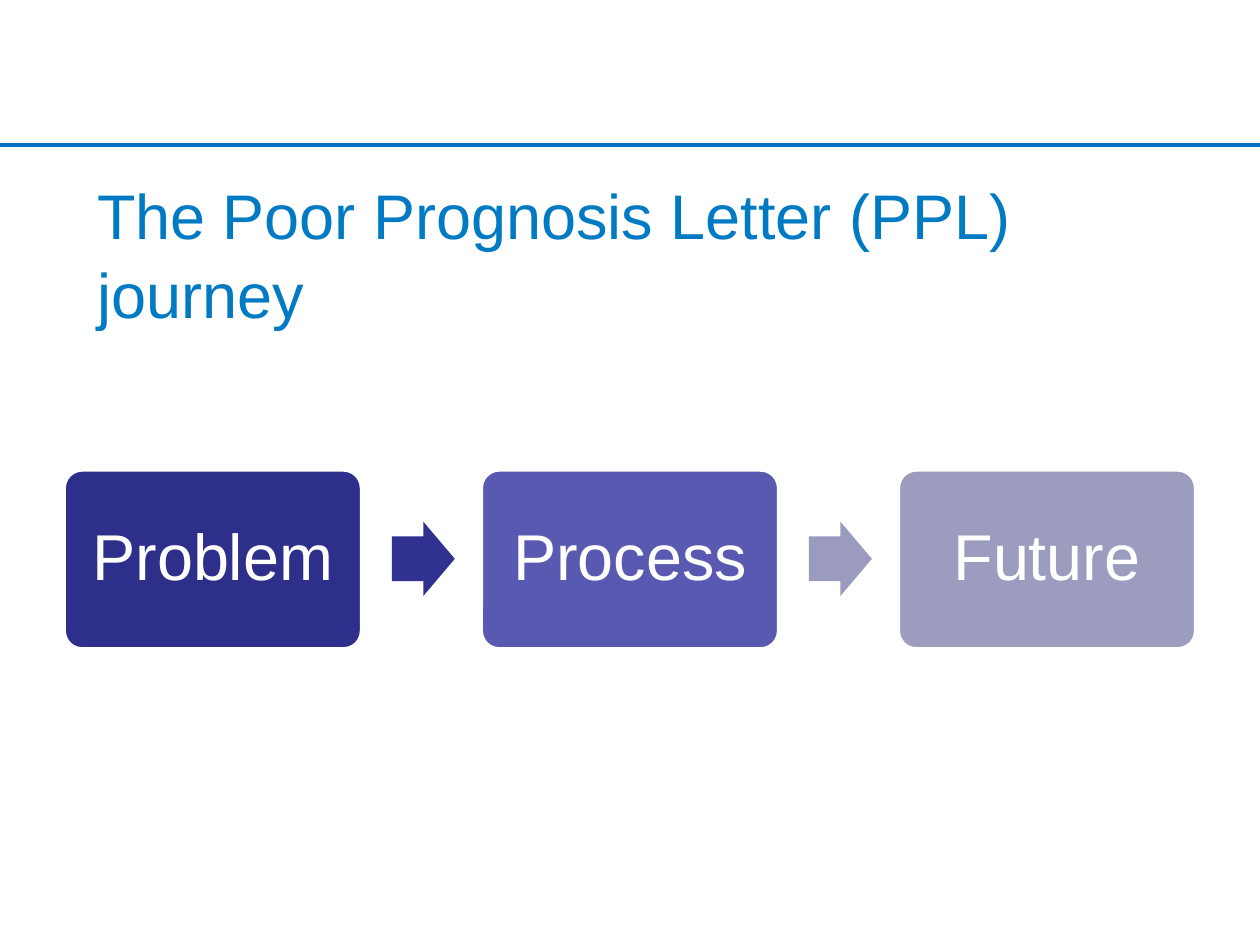
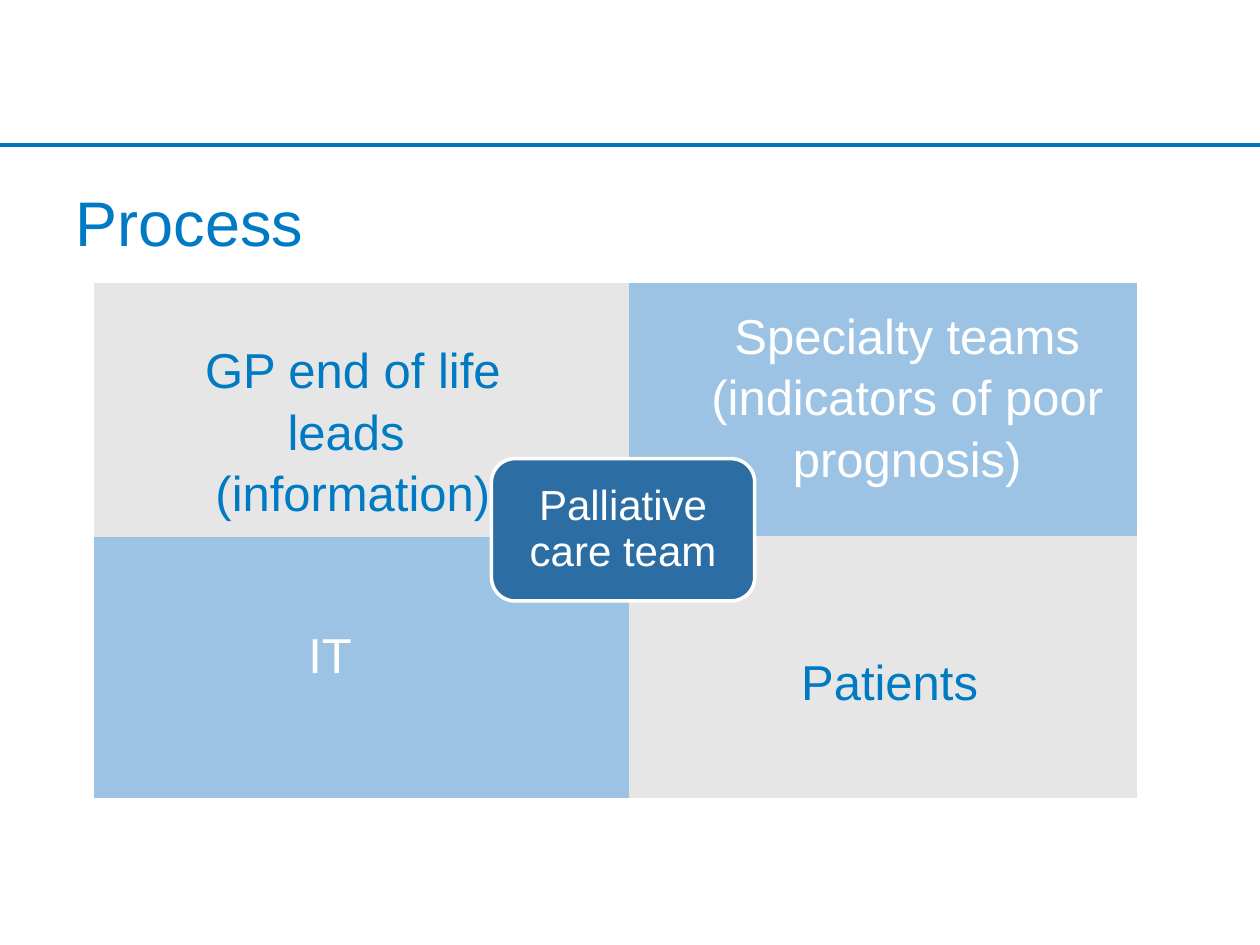
from typing import NamedTuple

from lxml.etree import SubElement
from pptx import Presentation
from pptx.dml.color import RGBColor
from pptx.enum.shapes import MSO_CONNECTOR, MSO_SHAPE
from pptx.enum.text import MSO_ANCHOR, MSO_AUTO_SIZE, PP_ALIGN
from pptx.oxml.ns import qn
from pptx.util import Inches, Pt

COLORS = {
    "white": "FFFFFF", "rule": "0070C0", "blue": "007AC3",
    "navy": "2E2E8B", "indigo": "5959B1", "lilac": "9C9CBF",
    "navy_arrow": "313192", "lilac_arrow": "9B9BBF",
    "sky": "9CC3E4", "grey": "E6E6E6", "hub": "2C6EA4",
}
TITLE = {"size": 36, "color": "blue", "align": PP_ALIGN.LEFT, "spacing": 1.05}
LABEL = {"size": 28, "color": "blue", "align": PP_ALIGN.CENTER, "spacing": 1.05}
LABEL_WHITE = LABEL | {"color": "white"}
STEP = {"size": 37, "color": "white", "align": PP_ALIGN.CENTER, "spacing": 0.9}
HUB = STEP | {"size": 24}


class Box(NamedTuple):
    left: float
    top: float
    width: float
    height: float

    def emu(self) -> list:
        return [Inches(v) for v in self]


class Step(NamedTuple):
    text: str
    fill: str
    arrow: str | None


class Quadrant(NamedTuple):
    box: Box
    fill: str
    label_box: Box
    lines: list[str]
    style: dict


STEPS = [
    Step("Problem", "navy", "navy_arrow"),
    Step("Process", "indigo", "lilac_arrow"),
    Step("Future", "lilac", None),
]
QUADRANTS = [
    Quadrant(Box(0.75, 4.12, 4.25, 2.21), "sky",
             Box(1.13, 4.88, 3.08, 0.88), ["IT "], LABEL_WHITE),
    Quadrant(Box(0.75, 2.25, 4.25, 2.01), "grey",
             Box(1.26, 2.62, 3.08, 1.51),
             ["GP end of life leads ", "(information)"], LABEL),
    Quadrant(Box(5, 2.25, 4.02, 2.21), "sky",
             Box(5.52, 2.35, 3.36, 1.51),
             ["Specialty teams", "(indicators of poor prognosis)"], LABEL_WHITE),
    Quadrant(Box(5, 4.26, 4.02, 2.07), "grey",
             Box(5.52, 5.1, 3.08, 0.57), ["Patients"], LABEL),
]


def rgb(name: str) -> RGBColor:
    return RGBColor.from_string(COLORS[name])


def write(tf, lines: list[str], style: dict, anchor=MSO_ANCHOR.TOP,
          inset: float | None = None) -> None:
    frame = {"word_wrap": True, "auto_size": MSO_AUTO_SIZE.NONE,
             "vertical_anchor": anchor}
    if inset is not None:
        for side in ("left", "right", "top", "bottom"):
            frame[f"margin_{side}"] = Inches(inset)
    for name, value in frame.items():
        setattr(tf, name, value)
    for i, line in enumerate(lines):
        p = tf.add_paragraph() if i else tf.paragraphs[0]
        p.alignment = style["align"]
        p.line_spacing = style["spacing"]
        r = p.add_run()
        r.text = line
        for name, value in {"name": "Arial", "size": Pt(style["size"])}.items():
            setattr(r.font, name, value)
        r.font.color.rgb = rgb(style["color"])


def add_block(s, kind, box: Box, fill: str, line: str | None = None,
              weight: float = 2, adjust: tuple = ()):
    sp = s.shapes.add_shape(kind, *box.emu())
    sp.shadow.inherit = False
    sp.fill.solid()
    sp.fill.fore_color.rgb = rgb(fill)
    if line:
        sp.line.color.rgb = rgb(line)
        sp.line.width = Pt(weight)
    else:
        sp.line.fill.background()
    for i, value in enumerate(adjust):
        sp.adjustments[i] = value
    return sp


def add_label(s, box: Box, lines: list[str], style: dict) -> None:
    write(s.shapes.add_textbox(*box.emu()).text_frame, lines, style)


def add_titled_slide(prs, title: str, box: Box):
    s = prs.slides.add_slide(prs.slide_layouts.get_by_name("Title Only"))
    sp = s.shapes.title
    for name, value in zip(("left", "top", "width", "height"), box.emu()):
        setattr(sp, name, value)
    write(sp.text_frame, [title], TITLE)
    rule = s.shapes.add_connector(MSO_CONNECTOR.STRAIGHT, 0, Inches(1.15),
                                  prs.slide_width, Inches(1.15))
    rule.line.color.rgb = rgb("rule")
    rule.line.width = Pt(2.25)
    SubElement(rule._element.spPr, qn("a:effectLst"))
    return s


def build_journey(prs) -> None:
    s = add_titled_slide(prs, "The Poor Prognosis Letter (PPL) journey",
                         Box(0.67, 1.32, 7.95, 1.72))
    for i, step in enumerate(STEPS):
        left = 0.51 + i * 3.31
        sp = add_block(s, MSO_SHAPE.ROUNDED_RECTANGLE, Box(left, 3.73, 2.36, 1.42),
                       step.fill, "white", adjust=(0.1,))
        write(sp.text_frame, [step.text], STEP, MSO_ANCHOR.MIDDLE, 0.15)
        if step.arrow:
            add_block(s, MSO_SHAPE.RIGHT_ARROW, Box(left + 2.6, 4.14, 0.5, 0.59),
                      step.arrow, adjust=(0.6, 0.5))


def build_process(prs) -> None:
    s = add_titled_slide(prs, "Process", Box(0.5, 1.38, 7.42, 0.7))
    for q in QUADRANTS:
        add_block(s, MSO_SHAPE.RECTANGLE, q.box, q.fill, q.fill, 0.75)
    for q in QUADRANTS:
        add_label(s, q.label_box, q.lines, q.style)
    sp = add_block(s, MSO_SHAPE.ROUNDED_RECTANGLE, Box(3.9, 3.64, 2.09, 1.13),
                   "hub", "white")
    write(sp.text_frame, ["Palliative care team"], HUB, MSO_ANCHOR.MIDDLE, 0.12)


def main() -> None:
    prs = Presentation()
    prs.slide_width, prs.slide_height = Inches(10), Inches(7.5)
    build_journey(prs)
    build_process(prs)
    prs.save("out.pptx")


if __name__ == "__main__":
    main()
